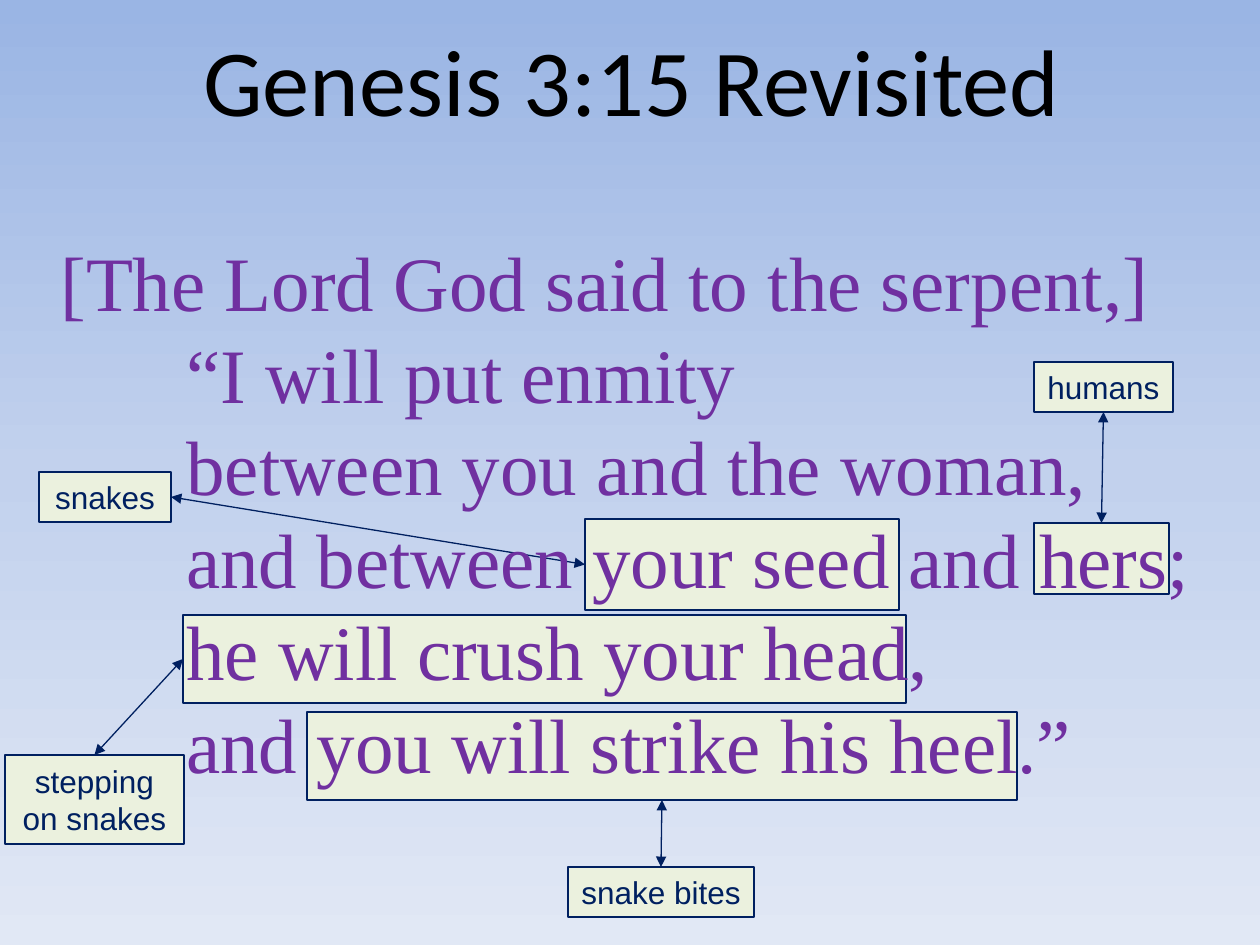
from copy import deepcopy
from lxml import etree
from pptx import Presentation
from pptx.dml.color import RGBColor
from pptx.enum.shapes import MSO_CONNECTOR, MSO_SHAPE
from pptx.enum.text import MSO_ANCHOR, PP_ALIGN
from pptx.oxml.ns import qn
from pptx.util import Pt

PX = 914400 // 126
RECT = MSO_SHAPE.RECTANGLE
LINE = MSO_CONNECTOR.STRAIGHT
MIDDLE = MSO_ANCHOR.MIDDLE
CENTER = PP_ALIGN.CENTER
TOP, LEFT, BOTTOM, RIGHT = range(4)

COLORS = {"title": "000000", "verse": "7030A0", "ink": "002060", "fill": "EBF1DE"}
SKY = [(0, "9AB5E4"), (0.5, "C2D1ED"), (1, "E1E8F5")]

TITLE = "Genesis 3:15 Revisited"
VERSE = [
    "[The Lord God said to the serpent,]",
    "“I will put enmity",
    "between you and the woman,",
    "and between your seed and hers;",
    "he will crush your head,",
    "and you will strike his heel.”",
]
# note, note box, phrase box, side of the phrase, side of the note, wraps
NOTES = [
    ("snake bites", (568, 867, 186, 50), (307, 712, 710, 88), BOTTOM, TOP, False),
    ("stepping on snakes", (5, 755, 179, 89), (183, 615, 723, 88), LEFT, TOP, True),
    ("humans", (1034, 362, 139, 50), (1034, 523, 135, 71), TOP, BOTTOM, False),
    ("snakes", (39, 472, 132, 50), (585, 519, 314, 91), LEFT, RIGHT, True),
]


def scale(box):
    return [n * PX for n in box]


def style(para, size, face, color):
    for run in para.runs:
        run.font.size = Pt(size)
        run.font.name = face
        run.font.color.rgb = RGBColor.from_string(COLORS[color])


def paint_sky(slide):
    fill = slide.background.fill
    fill.gradient()
    fill.gradient_angle = 270
    last = fill._fill._gradFill.gsLst[-1]
    last.addprevious(deepcopy(last))
    for stop, (pos, color) in zip(fill.gradient_stops, SKY):
        stop.position = pos
        stop.color.rgb = RGBColor.from_string(color)


def add_box(shapes, box):
    shape = shapes.add_shape(RECT, *scale(box))
    shape.shadow.inherit = False
    shape.fill.solid()
    shape.fill.fore_color.rgb = RGBColor.from_string(COLORS["fill"])
    shape.line.color.rgb = RGBColor.from_string(COLORS["ink"])
    shape.line.width = Pt(0.75)
    return shape


def add_arrow(shapes, start, side, end, end_side):
    """Join two boxes with a line that has a head at both ends."""
    arrow = shapes.add_connector(LINE, 0, 0, 0, 0)
    arrow.begin_connect(start, side)
    arrow.end_connect(end, end_side)
    arrow.line.color.rgb = RGBColor.from_string(COLORS["ink"])
    arrow.line.width = Pt(0.75)
    for tag in ("a:headEnd", "a:tailEnd"):
        etree.SubElement(arrow.line._ln, qn(tag), type="triangle", w="med", len="med")
    etree.SubElement(arrow._element.spPr, qn("a:effectLst"))


def add_note(shapes, text, box, phrase, side, end, wrap):
    note = add_box(shapes, box)
    frame = note.text_frame
    frame.text = text
    frame.word_wrap = wrap
    frame.vertical_anchor = MIDDLE
    para = frame.paragraphs[0]
    para.alignment = CENTER
    style(para, 18, "Arial", "ink")
    add_arrow(shapes, add_box(shapes, phrase), side, note, end)


def add_verse(shapes):
    frame = shapes.add_textbox(*scale((48, 228, 1164, 572))).text_frame
    frame.word_wrap = False
    frame.text = "\n".join(VERSE)
    for i, para in enumerate(frame.paragraphs):
        style(para, 44, "Times New Roman", "verse")
        if i:
            para._p.get_or_add_pPr().set("marL", str(126 * PX))


def main():
    deck = Presentation()
    deck.slide_width, deck.slide_height = scale((1260, 945))
    slide = deck.slides.add_slide(deck.slide_layouts[5])
    paint_sky(slide)

    title = slide.shapes.title
    title.left, title.top, title.width, title.height = scale((2, 0, 1260, 158))
    title.text_frame.text = TITLE
    title.text_frame.vertical_anchor = MIDDLE
    para = title.text_frame.paragraphs[0]
    para.alignment = CENTER
    style(para, 54, "Calibri", "title")

    for note in NOTES:
        add_note(slide.shapes, *note)
    add_verse(slide.shapes)
    deck.save("out.pptx")


if __name__ == "__main__":
    main()
